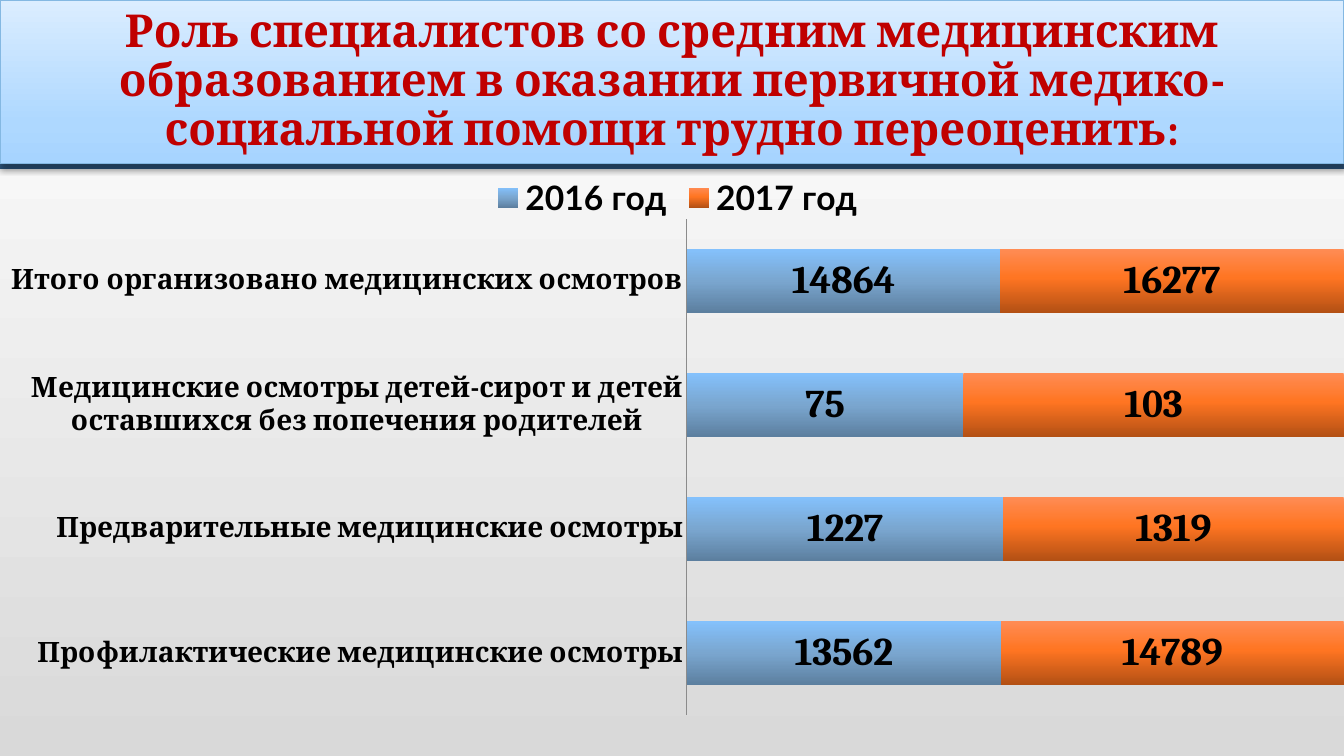
from copy import deepcopy

from lxml import etree
from pptx import Presentation
from pptx.chart.data import CategoryChartData
from pptx.dml.color import RGBColor
from pptx.enum import chart as ch, shapes, text
from pptx.oxml import parse_xml
from pptx.oxml.ns import nsdecls, qn
from pptx.util import Cm, Pt

HUES = {
    "black": "000000", "red": "C00000", "edge": "84B8E2", "axis": "8B8B8B",
}
BACK = [(0, "D9D9D9"), (1, "FFFFFF")]
BAND = [(0, "94B6D2"), (0.9, "558BB8"), (1, "2F5A85")]
HEAD = [(0, "A7D4FF"), (0.25, "AED8FF"), (1, "DBEDFF")]
BARS = [
    [(0, "84C1FC"), (0.5, "7AA6CF"), (1, "5C7F9F")],
    [(0, "FF8C54"), (0.45, "FF7522"), (1, "B35014")],
]
WIDE, TALL = Cm(33.87), Cm(19.05)
TITLE = ("Роль специалистов со средним медицинским образованием в оказании "
         "первичной медико-социальной помощи трудно переоценить:")
CATS = [
    "Профилактические медицинские осмотры",
    "Предварительные медицинские осмотры",
    "Медицинские осмотры детей-сирот и детей оставшихся без попечения родителей",
    "Итого организовано медицинских осмотров",
]
YEARS = {
    "2016 год": [13562, 1227, 75, 14864],
    "2017 год": [14789, 1319, 103, 16277],
}


def hue(name):
    return RGBColor.from_string(HUES[name])


def blend(fill, angle, stops, root=None):
    """Gradient fill; root is the element that holds it, for a third stop."""
    fill.gradient()
    fill.gradient_angle = angle
    if len(stops) > 2:
        row = root.find(".//" + qn("a:gsLst"))
        row.append(deepcopy(row[-1]))
    for stop, (pos, code) in zip(fill.gradient_stops, stops):
        stop.position = pos
        stop.color.rgb = RGBColor.from_string(code)


def style(font, size, face="Cambria", color="black", bold=True):
    font.size, font.name, font.bold = Pt(size), face, bold
    font.color.rgb = hue(color)


def add_band(slide):
    band = slide.shapes.add_shape(
        shapes.MSO_SHAPE.RECTANGLE, 0, 0, WIDE, Cm(4.24))
    band.shadow.inherit = False
    blend(band.fill, 270, BAND, band._element)
    band.line.fill.background()
    slide.shapes.title._element.addprevious(band._element)


def drop_shadow(shape):
    shape.shadow.inherit = False
    box = shape._element.spPr.find(qn("a:effectLst"))
    cast = etree.SubElement(
        box, qn("a:outerShdw"), blurRad=str(Pt(5.2)), dist=str(Pt(3)),
        dir="5400000", rotWithShape="0")
    tint = etree.SubElement(cast, qn("a:srgbClr"), val=HUES["black"])
    etree.SubElement(tint, qn("a:alpha"), val="40000")


def set_title(slide):
    head = slide.shapes.title
    head.left, head.top, head.width, head.height = 0, 0, WIDE, Cm(4.11)
    blend(head.fill, 90, HEAD, head._element)
    head.line.color.rgb = hue("edge")
    head.line.width = Pt(0.75)
    drop_shadow(head)
    frame = head.text_frame
    frame.text = TITLE
    frame.word_wrap = True
    frame.auto_size = text.MSO_AUTO_SIZE.NONE
    frame.vertical_anchor = text.MSO_ANCHOR.MIDDLE
    para = frame.paragraphs[0]
    para.alignment = text.PP_ALIGN.CENTER
    para.line_spacing = 0.9
    style(para.runs[0].font, 32.4, color="red")


def place_plot(chart, x, y, w, h):
    """Fix the inner plot area, in fractions of the chart."""
    area = chart._chartSpace.find(".//" + qn("c:plotArea"))
    for old in area.findall(qn("c:layout")):
        area.remove(old)
    sides = "".join(f'<c:{k} val="{v}"/>'
                    for k, v in zip("xywh", (x, y, w, h)))
    area.insert(0, parse_xml(
        f'<c:layout {nsdecls("c")}><c:manualLayout>'
        '<c:layoutTarget val="inner"/>'
        '<c:xMode val="edge"/><c:yMode val="edge"/>'
        f'{sides}</c:manualLayout></c:layout>'))


def set_axes(chart):
    cat, val = chart.category_axis, chart.value_axis
    cat.major_tick_mark = ch.XL_TICK_MARK.NONE
    cat.format.line.color.rgb = hue("axis")
    style(cat.tick_labels.font, 20)
    val.has_major_gridlines = False
    val.visible = False


def set_legend(chart):
    chart.has_legend = True
    chart.legend.position = ch.XL_LEGEND_POSITION.TOP
    chart.legend.include_in_layout = False
    style(chart.legend.font, 24, "Lato")


def set_bars(plot):
    plot.gap_width, plot.overlap = 95, 100
    plot.vary_by_categories = False
    for bar, stops in zip(plot.series, BARS):
        blend(bar.format.fill, 270, stops, bar._element)
        bar.data_labels.show_value = True
        style(bar.data_labels.font, 28)


def add_bars(slide):
    data = CategoryChartData()
    data.categories = CATS
    for name, vals in YEARS.items():
        data.add_series(name, vals)
    chart = slide.shapes.add_chart(
        ch.XL_CHART_TYPE.BAR_STACKED_100, Cm(0.28), Cm(4.11),
        Cm(33.58), Cm(14.66), data).chart
    chart.has_title = False
    style(chart.font, 18, bold=False)
    set_axes(chart)
    set_legend(chart)
    set_bars(chart.plots[0])
    place_plot(chart, 0.507, 0.096, 0.493, 0.853)


def main():
    deck = Presentation()
    deck.slide_width, deck.slide_height = WIDE, TALL
    slide = deck.slides.add_slide(deck.slide_layouts[5])
    blend(slide.background.fill, 90, BACK)
    add_band(slide)
    set_title(slide)
    add_bars(slide)
    deck.save("out.pptx")


if __name__ == "__main__":
    main()
